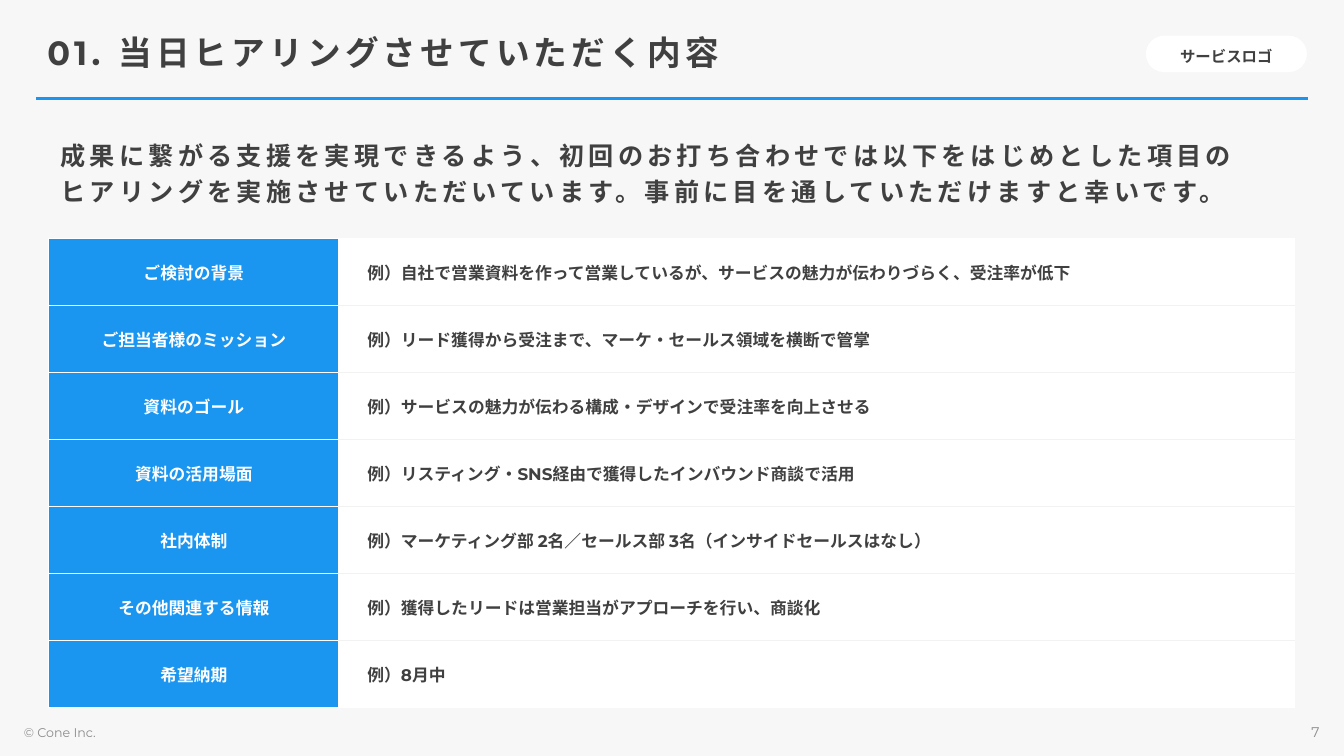
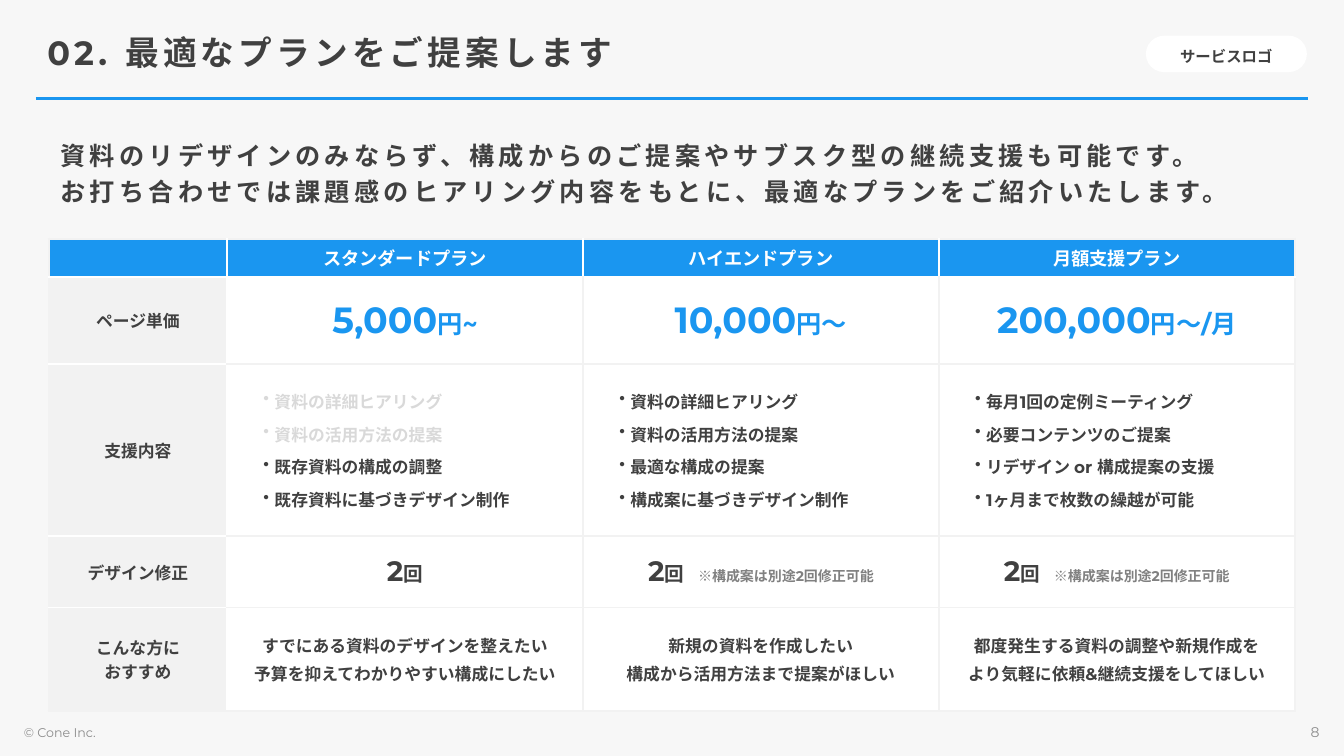
"""Build the hearing-items slide and the pricing-plans slide."""
from lxml.etree import SubElement
from pptx import Presentation
from pptx.dml.color import RGBColor
from pptx.enum.shapes import MSO_CONNECTOR, MSO_SHAPE
from pptx.enum.text import MSO_ANCHOR as Anchor, MSO_AUTO_SIZE, PP_ALIGN as Align
from pptx.oxml.ns import qn
from pptx.util import Pt

BLUE, WHITE, GREY, DARK = "1A96F0", "FFFFFF", "F2F2F2", "404040"
FADED, NOTE, FOOTER, BACKGROUND = "D9D9D9", "808080", "8C8C8C", "F7F7F7"
FONT = "Montserrat"


def paint(target, color):
    """Give a fill, line or font a solid colour."""
    fill = target if hasattr(target, "fore_color") else target.fill
    fill.solid()
    fill.fore_color.rgb = RGBColor.from_string(color)


def set_font(font, size, color, bold=True):
    """Set the deck font with a size, colour and weight."""
    font.name = FONT
    font.size = Pt(size)
    font.bold = bold
    paint(font, color)


hearing_rows = [
    (12, 0, True, [label, "例）" + example])
    for label, example in [
        ("ご検討の背景", "自社で営業資料を作って営業しているが、サービスの魅力が伝わりづらく、受注率が低下"),
        ("ご担当者様のミッション", "リード獲得から受注まで、マーケ・セールス領域を横断で管掌"),
        ("資料のゴール", "サービスの魅力が伝わる構成・デザインで受注率を向上させる"),
        ("資料の活用場面", "リスティング・SNS経由で獲得したインバウンド商談で活用"),
        ("社内体制", "マーケティング部 2名／セールス部 3名（インサイドセールスはなし）"),
        ("その他関連する情報", "獲得したリードは営業担当がアプローチを行い、商談化"),
        ("希望納期", "8月中"),
    ]
]

prices = [
    [[(amount, 26, BLUE), (unit, 18, BLUE)]]
    for amount, unit in [("5,000", "円~"), ("10,000", "円〜"), ("200,000", "円〜/月")]
]
revision = [("2", 20, DARK), ("回", 14, DARK)]
revision_with_note = revision + [("　※構成案は別途2回修正可能", 10, NOTE)]

plan_rows = [
    (13, 0, False, ["", "スタンダードプラン", "ハイエンドプラン", "月額支援プラン"]),
    (12, 0, False, ["ページ単価", *prices]),
    (12, 6, True, [
        "支援内容",
        [[("資料の詳細ヒアリング", 12, FADED)], [("資料の活用方法の提案", 12, FADED)],
         "既存資料の構成の調整", "既存資料に基づきデザイン制作"],
        ["資料の詳細ヒアリング", "資料の活用方法の提案",
         "最適な構成の提案", "構成案に基づきデザイン制作"],
        ["毎月1回の定例ミーティング", "必要コンテンツのご提案",
         "リデザイン or 構成提案の支援", "1ヶ月まで枚数の繰越が可能"],
    ]),
    (12, 3, False, ["デザイン修正", [revision], [revision_with_note], [revision_with_note]]),
    (12, 3, False, [
        ["こんな方に", "おすすめ"],
        ["すでにある資料のデザインを整えたい", "予算を抑えてわかりやすい構成にしたい"],
        ["新規の資料を作成したい", "構成から活用方法まで提案がほしい"],
        ["都度発生する資料の調整や新規作成を", "より気軽に依頼&継続支援をしてほしい"],
    ]),
]

slides = [
    (7, "01. 当日ヒアリングさせていただく内容",
     ["成果に繋がる支援を実現できるよう、初回のお打ち合わせでは以下をはじめとした項目の",
      "ヒアリングを実施させていただいています。事前に目を通していただけますと幸いです。"],
     False, [207.4, 682.6], [47.8] * 7, hearing_rows),
    (8, "02. 最適なプランをご提案します",
     ["資料のリデザインのみならず、構成からのご提案やサブスク型の継続支援も可能です。",
      "お打ち合わせでは課題感のヒアリング内容をもとに、最適なプランをご紹介いたします。"],
     True, [127.4] + [254.2] * 3, [25, 62, 123, 51, 73.6], plan_rows),
]

presentation = Presentation()
presentation.slide_width = Pt(960)
presentation.slide_height = Pt(540)
paint(presentation.slide_master.background, BACKGROUND)
layout = presentation.slide_layouts[1]

for index, anchor, box, top_margin in [
    (0, Anchor.MIDDLE, (26.6, 15, 901.4, 45.4), 5.8),
    (1, Anchor.TOP, (36, 91.4, 888, 65.5), 11.5),
]:
    placeholder = layout.placeholders[index]
    placeholder.left, placeholder.top, placeholder.width, placeholder.height = map(Pt, box)
    frame = placeholder.text_frame
    frame.vertical_anchor = anchor
    frame.auto_size = MSO_AUTO_SIZE.NONE
    frame.margin_top = Pt(top_margin)

for number, title, lead, has_header, widths, heights, rows in slides:
    slide = presentation.slides.add_slide(layout)

    rule = slide.shapes.add_connector(
        MSO_CONNECTOR.STRAIGHT, Pt(25.6), Pt(70.2), Pt(934.6), Pt(70.2))
    rule.line.width = Pt(2)
    paint(rule.line, BLUE)
    SubElement(rule._element.spPr, qn("a:effectLst"))

    badge = slide.shapes.add_shape(
        MSO_SHAPE.ROUNDED_RECTANGLE, Pt(818.5), Pt(25.5), Pt(115), Pt(26))
    badge.adjustments[0] = 0.5
    badge.shadow.inherit = False
    badge.line.fill.background()
    paint(badge, WHITE)
    frame = badge.text_frame
    frame.margin_top, frame.margin_bottom = Pt(5.8), Pt(2.9)
    frame.vertical_anchor = Anchor.MIDDLE
    frame.text = "サービスロゴ"
    frame.paragraphs[0].alignment = Align.CENTER
    set_font(frame.paragraphs[0].font, 11, DARK)

    title_frame = slide.shapes.title.text_frame
    title_frame.text = title
    lead_frame = slide.placeholders[1].text_frame
    lead_frame.text = "\n".join(lead)
    for frame, size in [(title_frame, 24), (lead_frame, 18)]:
        for position, paragraph in enumerate(frame.paragraphs):
            paragraph.alignment = Align.LEFT
            paragraph.line_spacing = 0.9
            paragraph.space_before = Pt(6 if position else 0)
            properties = paragraph._p.get_or_add_pPr()
            properties.set("marL", "0")
            properties.set("indent", "0")
            SubElement(properties, qn("a:buNone"))
            set_font(paragraph.font, size, DARK)
            properties.find(qn("a:defRPr")).set("spc", "300")

    for text, left, size, alignment in [
        ("© Cone Inc.", 10, 9, Align.LEFT),
        (str(number), 733.7, 10, Align.RIGHT),
    ]:
        frame = slide.shapes.add_textbox(Pt(left), Pt(513.4), Pt(216), Pt(19.4)).text_frame
        frame.word_wrap = True
        frame.vertical_anchor = Anchor.MIDDLE
        frame.text = text
        frame.paragraphs[0].alignment = alignment
        set_font(frame.paragraphs[0].font, size, FOOTER, False)

    row_count, column_count = len(heights), len(widths)
    table = slide.shapes.add_table(
        row_count, column_count, Pt(34.8), Pt(170.6), Pt(sum(widths)), Pt(sum(heights))).table
    table.first_row = table.horz_banding = False
    for column, width in zip(table.columns, widths):
        column.width = Pt(width)
    for row, height in zip(table.rows, heights):
        row.height = Pt(height)
    border_width = Pt(1.5 if has_header else 1)
    outer_color = GREY if has_header else WHITE

    for r, (size, spacing, is_left, contents) in enumerate(rows):
        for c, content in enumerate(contents):
            cell = table.cell(r, c)
            in_header = has_header and r == 0
            is_label = c == 0
            for side, edge, last, is_white in [
                ("L", c, column_count, in_header or c == 1),
                ("R", c + 1, column_count, in_header or is_label),
                ("T", r, row_count, is_label or (has_header and r == 1)),
                ("B", r + 1, row_count, is_label or in_header),
            ]:
                color = outer_color if edge in (0, last) else WHITE if is_white else GREY
                line = SubElement(
                    cell._tc.get_or_add_tcPr(), qn("a:ln" + side), w=str(border_width))
                SubElement(SubElement(line, qn("a:solidFill")), qn("a:srgbClr"), val=color)

            is_blue = in_header or (is_label and not has_header)
            paint(cell, BLUE if is_blue else GREY if is_label else WHITE)
            cell.vertical_anchor = Anchor.MIDDLE
            cell.margin_top = cell.margin_bottom = Pt(2.9)
            flush_left = is_left and not is_label
            cell.margin_left = Pt(20.2 if flush_left else 7.2)

            frame = cell.text_frame
            for position, item in enumerate([content] if isinstance(content, str) else content):
                paragraph = frame.add_paragraph() if position else frame.paragraphs[0]
                paragraph.alignment = Align.LEFT if flush_left else Align.CENTER
                paragraph.space_before = Pt(spacing if position and not is_label else 0)
                if flush_left and has_header:
                    properties = paragraph._p.get_or_add_pPr()
                    properties.set("marL", str(Pt(13.7)))
                    properties.set("indent", str(Pt(-7.9)))
                    SubElement(properties, qn("a:buChar"), char="•")
                default_color = WHITE if is_blue else DARK
                runs = [(item, size, default_color)] if isinstance(item, str) else item
                set_font(paragraph.font, *runs[0][1:])
                for text, run_size, run_color in runs:
                    run = paragraph.add_run()
                    run.text = text
                    if (run_size, run_color) != runs[0][1:]:
                        set_font(run.font, run_size, run_color)

presentation.save("out.pptx")
